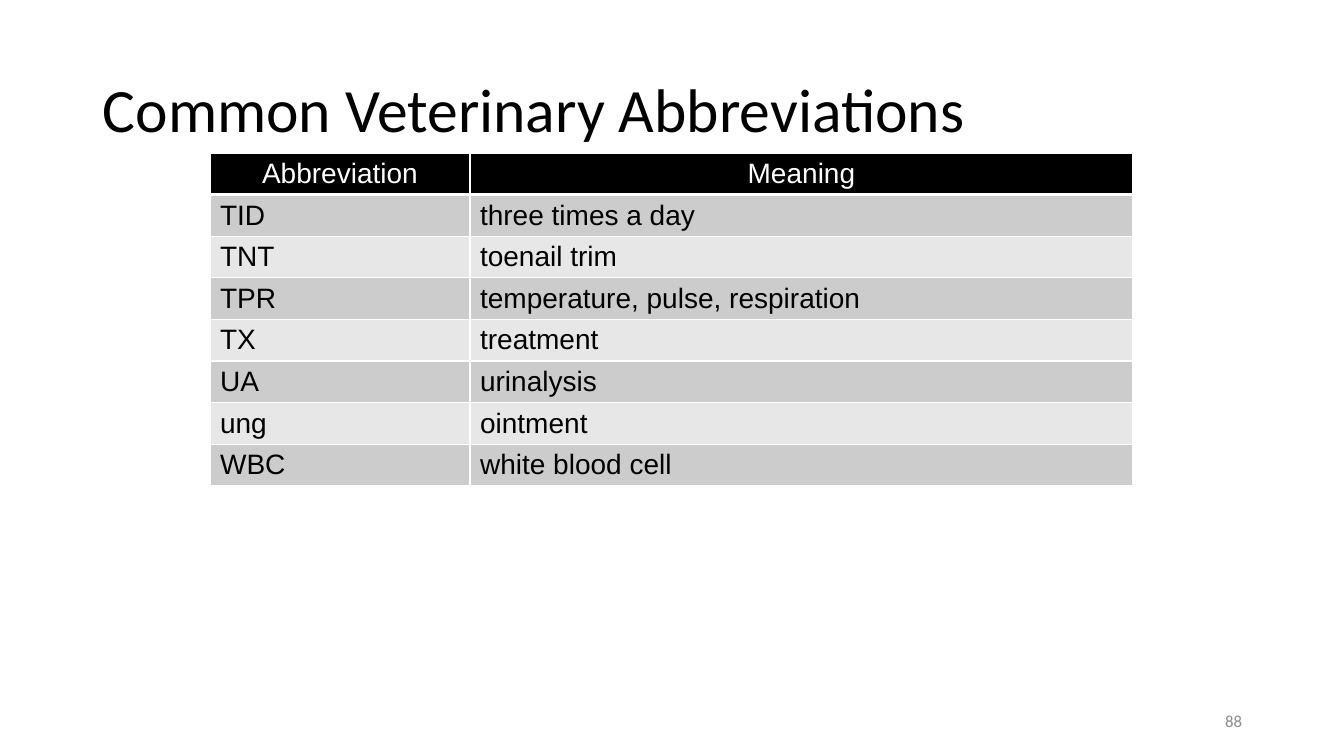
from lxml import etree
from pptx import Presentation
from pptx.dml.color import RGBColor
from pptx.enum.text import MSO_ANCHOR, PP_ALIGN
from pptx.oxml.ns import qn
from pptx.util import Emu, Pt

LEFT, CENTER, RIGHT = PP_ALIGN.LEFT, PP_ALIGN.CENTER, PP_ALIGN.RIGHT
MIDDLE = MSO_ANCHOR.MIDDLE

TITLE = "Common Veterinary Abbreviations"
PAGE_NUMBER = "88"
ROWS = [
    ("Abbreviation", "Meaning"),
    ("TID", "three times a day"),
    ("TNT", "toenail trim"),
    ("TPR", "temperature, pulse, respiration"),
    ("TX", "treatment"),
    ("UA", "urinalysis"),
    ("ung", "ointment"),
    ("WBC", "white blood cell"),
]

THEME = {
    "heading_font": "Calibri", "table_font": "Arial",
    "title_size": 44, "table_size": 20, "number_size": 12,
    "text": "000000", "number": "8C8C8C", "border": "FFFFFF",
    "header_fill": "000000", "header_text": "FFFFFF",
    "bands": ("E7E7E7", "CCCCCC"),
}

SLIDE_SIZE = (1344, 756)
TITLE_BOX = (93, 40, 1159, 146)
NUMBER_BOX = (950, 701, 302, 40)
TABLE_BOX = (210, 153, 923, 331)
COLUMN_WIDTHS = (260, 663)
CELL_MARGIN = 4


def px(n):
    return Emu(round(n * 914400 / 100.8))


def write(tf, text, *, font, size, color, align=LEFT, spacing=None):
    tf.word_wrap = True
    p = tf.paragraphs[0]
    p.alignment = align
    if spacing:
        p.line_spacing = spacing
    r = p.add_run()
    r.text = text
    r.font.name = font
    r.font.size = Pt(size)
    r.font.color.rgb = RGBColor.from_string(color)


def add_text(slide, box, text, **fmt):
    sp = slide.shapes.add_textbox(*map(px, box))
    sp.text_frame.vertical_anchor = MIDDLE
    write(sp.text_frame, text, **fmt)


def add_borders(cell, bottom):
    tc_pr = cell._tc.get_or_add_tcPr()
    for side, width in (("L", 1), ("R", 1), ("T", 1), ("B", bottom)):
        ln = etree.SubElement(tc_pr, qn(f"a:ln{side}"), w=str(Pt(width)))
        fill = etree.SubElement(ln, qn("a:solidFill"))
        etree.SubElement(fill, qn("a:srgbClr"), val=THEME["border"])


def add_table(slide):
    table = slide.shapes.add_table(
        len(ROWS), len(COLUMN_WIDTHS), *map(px, TABLE_BOX)).table
    for column, width in zip(table.columns, COLUMN_WIDTHS):
        column.width = px(width)
    for i, values in enumerate(ROWS):
        header = i == 0
        table.rows[i].height = px(TABLE_BOX[3] / len(ROWS))
        fill = THEME["header_fill"] if header else THEME["bands"][i % 2]
        for j, value in enumerate(values):
            cell = table.cell(i, j)
            cell.margin_top = cell.margin_bottom = px(CELL_MARGIN)
            cell.vertical_anchor = MIDDLE
            add_borders(cell, bottom=3 if header else 1)
            cell.fill.solid()
            cell.fill.fore_color.rgb = RGBColor.from_string(fill)
            write(cell.text_frame, value, font=THEME["table_font"],
                  size=THEME["table_size"],
                  color=THEME["header_text"] if header else THEME["text"],
                  align=CENTER if header else LEFT)


def main():
    prs = Presentation()
    prs.slide_width, prs.slide_height = map(px, SLIDE_SIZE)
    slide = prs.slides.add_slide(prs.slide_layouts[6])
    add_text(slide, TITLE_BOX, TITLE, font=THEME["heading_font"],
             size=THEME["title_size"], color=THEME["text"], spacing=0.9)
    add_text(slide, NUMBER_BOX, PAGE_NUMBER, font=THEME["heading_font"],
             size=THEME["number_size"], color=THEME["number"], align=RIGHT)
    add_table(slide)
    prs.save("out.pptx")


if __name__ == "__main__":
    main()
